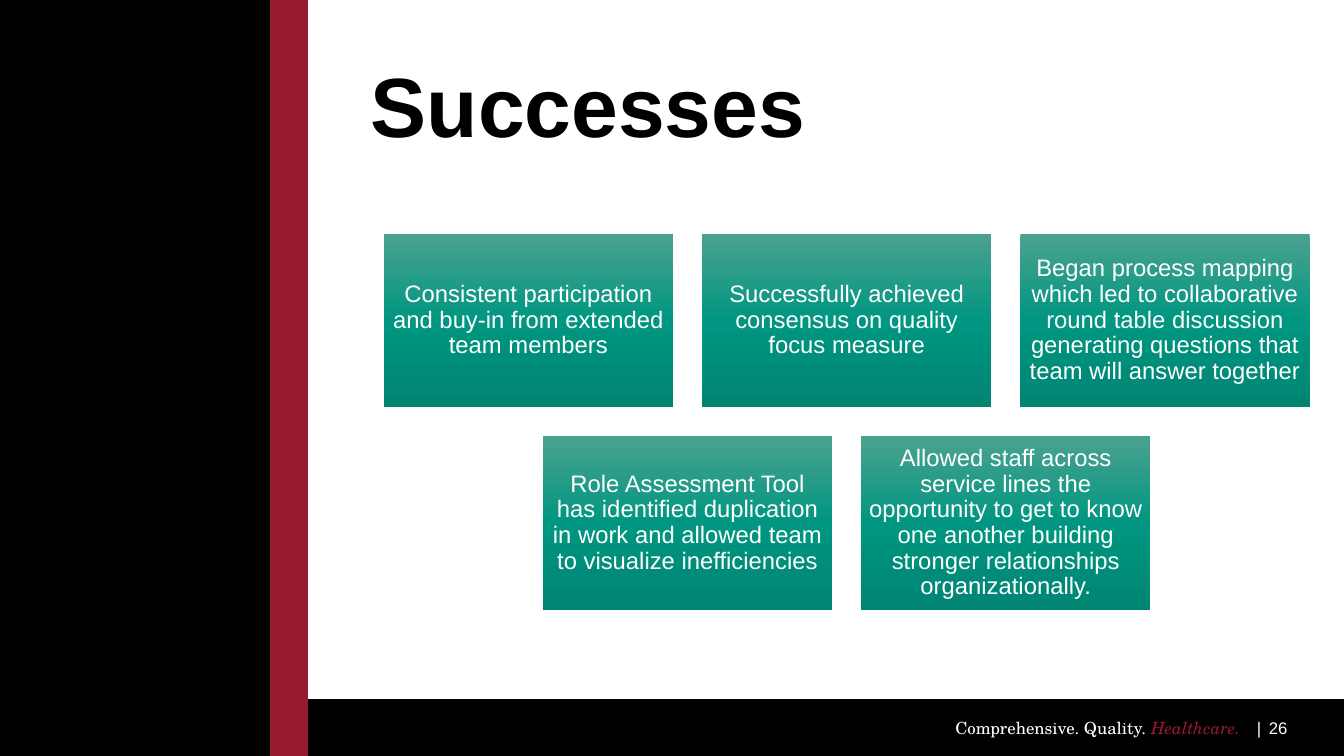
from copy import deepcopy

from lxml.etree import SubElement
from pptx import Presentation
from pptx.dml.color import RGBColor
from pptx.enum.shapes import MSO_SHAPE
from pptx.enum.text import MSO_ANCHOR, PP_ALIGN
from pptx.oxml.ns import qn
from pptx.util import Inches, Pt

BLACK = RGBColor(0x00, 0x00, 0x00)
WHITE = RGBColor(0xFF, 0xFF, 0xFF)
CRIMSON = RGBColor(0x97, 0x1B, 0x2F)
TEAL_STOPS = (
    (0, RGBColor(0x4B, 0xA2, 0x8F)),
    (0.5, RGBColor(0x00, 0x96, 0x81)),
    (1, RGBColor(0x00, 0x85, 0x73)),
)
SANS, SERIF = "Arial", "TeX Gyre Schola"
COLS, ROWS = 160, 90
CARD_W, CARD_H, CARD_GAP = 34.44, 20.64, 3.45
CARDS_MID, CARDS_TOP = 100.8, 27.84
CARD_ROWS = (
    (
        "Consistent participation and buy-in from extended team members",
        "Successfully achieved consensus on quality focus measure",
        "Began process mapping which led to collaborative round table discussion "
        "generating questions that team will answer together",
    ),
    (
        "Role Assessment Tool has identified duplication in work and allowed team "
        "to visualize inefficiencies",
        "Allowed staff across service lines the opportunity to get to know one "
        "another building stronger relationships organizationally.",
    ),
)


class Deck:
    """Draws styled elements on one slide, placed in grid columns and rows."""

    def __init__(self):
        self.prs = Presentation()
        self.prs.slide_width, self.prs.slide_height = Inches(13.33), Inches(7.5)
        self.slide = self.prs.slides.add_slide(self.prs.slide_layouts[6])

    def place(self, x, y, w, h):
        col, row = self.prs.slide_width / COLS, self.prs.slide_height / ROWS
        return [int(v) for v in (x * col, y * row, w * col, h * row)]

    def rect(self, *area):
        sp = self.slide.shapes.add_shape(MSO_SHAPE.RECTANGLE, *self.place(*area))
        sp.shadow.inherit = False
        return sp

    def band(self, color, *area):
        sp = self.rect(*area)
        sp.fill.solid()
        sp.fill.fore_color.rgb = color
        sp.line.color.rgb = color
        sp.line.width = Pt(1)

    def style(self, r, size, color, font=SANS, bold=False, italic=False):
        r.font.size, r.font.name = Pt(size), font
        r.font.bold, r.font.italic = bold, italic
        r.font.color.rgb = color

    def label(self, sp, text, size, color, align, anchor, bold=False):
        tf = sp.text_frame
        tf.word_wrap = True
        tf.vertical_anchor = anchor
        p = tf.paragraphs[0]
        p.text = text
        p.alignment = align
        p.line_spacing = 0.9
        self.style(p.runs[0], size, color, bold=bold)

    def textbox(self, *area):
        return self.slide.shapes.add_textbox(*self.place(*area))

    def title(self, text, *area):
        self.label(self.textbox(*area), text, 60, BLACK, PP_ALIGN.LEFT,
                   MSO_ANCHOR.BOTTOM, bold=True)

    def page_number(self, text, *area):
        self.label(self.textbox(*area), text, 12, WHITE, PP_ALIGN.CENTER,
                   MSO_ANCHOR.MIDDLE)

    def tagline(self, parts, tab, *area):
        tf = self.textbox(*area).text_frame
        tf.word_wrap = True
        p = tf.paragraphs[0]
        tabs = SubElement(p._p.get_or_add_pPr(), qn("a:tabLst"))
        SubElement(tabs, qn("a:tab"), pos=str(int(Inches(tab))), algn="l")
        for text, color, font, italic in parts:
            r = p.add_run()
            r.text = text
            self.style(r, 12, color, font, italic=italic)

    def card(self, text, *area):
        sp = self.rect(*area)
        sp.line.fill.background()
        sp.fill.gradient()
        sp.fill.gradient_angle = 270
        stop_list = sp._element.xpath(".//a:gsLst")[0]
        stop_list.append(deepcopy(stop_list[0]))
        for stop, (position, color) in zip(sp.fill.gradient_stops, TEAL_STOPS):
            stop.position = position
            stop.color.rgb = color
        tf = sp.text_frame
        tf.margin_left = tf.margin_right = Inches(0.07)
        tf.margin_top = tf.margin_bottom = Inches(0.07)
        self.label(sp, text, 17, WHITE, PP_ALIGN.CENTER, MSO_ANCHOR.MIDDLE)

    def card_rows(self, rows):
        for i, texts in enumerate(rows):
            width = len(texts) * (CARD_W + CARD_GAP) - CARD_GAP
            for j, text in enumerate(texts):
                x = CARDS_MID - width / 2 + j * (CARD_W + CARD_GAP)
                y = CARDS_TOP + i * (CARD_H + CARD_GAP)
                self.card(text, x, y, CARD_W, CARD_H)


def main():
    deck = Deck()
    deck.band(BLACK, 0, 83.28, COLS, 6.72)
    deck.tagline(
        (
            ("Comprehensive. Quality. ", WHITE, SERIF, False),
            ("Healthcare.", CRIMSON, SERIF, True),
            ("\t|", WHITE, SANS, False),
        ),
        2.99, 112.56, 84.84, 39.6, 3.6,
    )
    deck.page_number("26", 145.8, 84.96, 12.72, 3.6)
    deck.band(BLACK, 0, 0, 32.28, 83.88)
    deck.band(CRIMSON, 32.28, 0, 4.32, ROWS)
    deck.title("Successes", 42.96, 6.36, 110.16, 12.72)
    deck.card_rows(CARD_ROWS)
    deck.prs.save("out.pptx")


if __name__ == "__main__":
    main()
